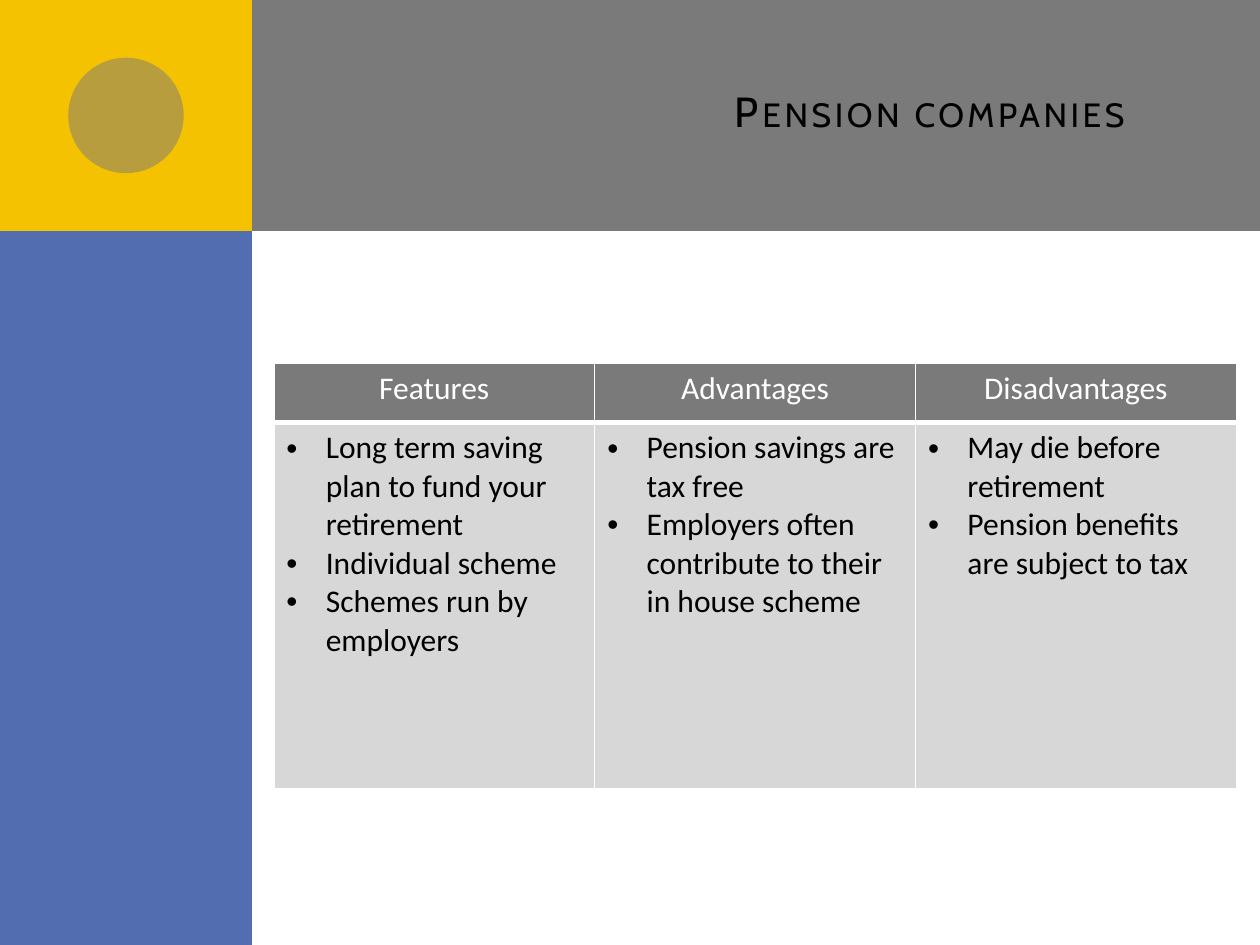
from dataclasses import dataclass

from lxml.etree import SubElement
from pptx import Presentation
from pptx.dml.color import RGBColor
from pptx.enum.shapes import MSO_SHAPE as Shape
from pptx.enum.text import MSO_ANCHOR as Anchor, PP_ALIGN as Align
from pptx.oxml import parse_xml
from pptx.oxml.ns import nsdecls, qn
from pptx.util import Pt


@dataclass(frozen=True)
class Theme:
    grey: str = "7A7A7A"
    blue: str = "526DB0"
    yellow: str = "F5C201"
    pale: str = "D7D7D7"
    black: str = "000000"
    white: str = "FFFFFF"
    title_font: str = "Cabin"
    body_font: str = "Calibri"
    title_size: int = 24
    body_size: int = 18


THEME = Theme()

TITLE = "Pension companies"
COLUMNS = [
    ("Features", [
        "Long term saving plan to fund your retirement",
        "Individual scheme",
        "Schemes run by employers",
    ]),
    ("Advantages", [
        "Pension savings are tax free",
        "Employers often contribute to their in house scheme",
    ]),
    ("Disadvantages", [
        "May die before retirement",
        "Pension benefits are subject to tax",
    ]),
]

SLIDE_W, SLIDE_H = 720, 540
SIDEBAR_W, BANNER_H = 144, 132
DISC = 66
TABLE_X, TABLE_Y, TABLE_W = 156.5, 207.5, 550
HEADER_H, BODY_H = 34, 209.5
INDENT = 22.5
THIN, THICK = 1, 3

PANELS = [
    (Shape.RECTANGLE, (36, 0, SLIDE_W - 36, BANNER_H), THEME.grey, None),
    (Shape.RECTANGLE, (0, 0, SIDEBAR_W, SLIDE_H), THEME.blue, None),
    (Shape.RECTANGLE, (0, 0, SIDEBAR_W, BANNER_H), THEME.yellow, None),
    (Shape.OVAL, ((SIDEBAR_W - DISC) / 2, (BANNER_H - DISC) / 2, DISC, DISC), THEME.grey, 50),
]


def points(values):
    return [Pt(value) for value in values]


def paint(fill, color):
    fill.solid()
    fill.fore_color.rgb = RGBColor.from_string(color)


def style_runs(paragraph, font_name, size, color):
    for run in paragraph.runs:
        run.font.name = font_name
        run.font.size = Pt(size)
        run.font.bold = False
        run.font.color.rgb = RGBColor.from_string(color)


def add_panel(slide, kind, box, color, opacity):
    panel = slide.shapes.add_shape(kind, *points(box))
    panel.shadow.inherit = False
    panel.line.fill.background()
    paint(panel.fill, color)
    if opacity is not None:
        tint = panel.fill._xPr.find(f".//{qn('a:srgbClr')}")
        SubElement(tint, qn("a:alpha"), val=str(opacity * 1000))


def add_title(slide):
    frame = slide.shapes.add_textbox(*points((192, 18, 492, 90))).text_frame
    frame.word_wrap = True
    frame.vertical_anchor = Anchor.MIDDLE
    frame.text = TITLE
    heading = frame.paragraphs[0]
    heading.alignment = Align.RIGHT
    style_runs(heading, THEME.title_font, THEME.title_size, THEME.black)
    letters = heading.runs[0].font._element
    letters.set("cap", "small")
    letters.set("spc", "200")


def fill_cell(cell, lines, fill, color, top, bottom):
    paint(cell.fill, fill)
    cell.text_frame.text = "\n".join(lines)
    for paragraph in cell.text_frame.paragraphs:
        style_runs(paragraph, THEME.body_font, THEME.body_size, color)
    properties = cell._tc.get_or_add_tcPr()
    edges = {"lnL": THIN, "lnR": THIN, "lnT": top, "lnB": bottom}
    for position, (edge, width) in enumerate(edges.items()):
        properties.insert(position, parse_xml(
            f'<a:{edge} {nsdecls("a")} w="{Pt(width)}"><a:solidFill>'
            f'<a:srgbClr val="{THEME.white}"/></a:solidFill></a:{edge}>'))


def add_bullet(paragraph):
    properties = paragraph._p.get_or_add_pPr()
    properties.set("marL", str(Pt(INDENT)))
    properties.set("indent", str(-Pt(INDENT)))
    SubElement(properties, qn("a:buFont"), typeface="Arial")
    SubElement(properties, qn("a:buChar"), char="•")


def add_comparison(slide):
    box = (TABLE_X, TABLE_Y, TABLE_W, HEADER_H + BODY_H)
    table = slide.shapes.add_table(2, len(COLUMNS), *points(box)).table
    for row, height in zip(table.rows, (HEADER_H, BODY_H)):
        row.height = Pt(height)
    for index, (heading, bullets) in enumerate(COLUMNS):
        table.columns[index].width = Pt(TABLE_W / len(COLUMNS))
        header, body = table.cell(0, index), table.cell(1, index)
        fill_cell(header, [heading], THEME.grey, THEME.white, THIN, THICK)
        header.text_frame.paragraphs[0].alignment = Align.CENTER
        fill_cell(body, bullets, THEME.pale, THEME.black, THICK, THIN)
        for paragraph in body.text_frame.paragraphs:
            add_bullet(paragraph)


def main():
    deck = Presentation()
    deck.slide_width, deck.slide_height = points((SLIDE_W, SLIDE_H))
    slide = deck.slides.add_slide(deck.slide_layouts[6])
    for panel in PANELS:
        add_panel(slide, *panel)
    add_title(slide)
    add_comparison(slide)
    deck.save("out.pptx")


if __name__ == "__main__":
    main()
